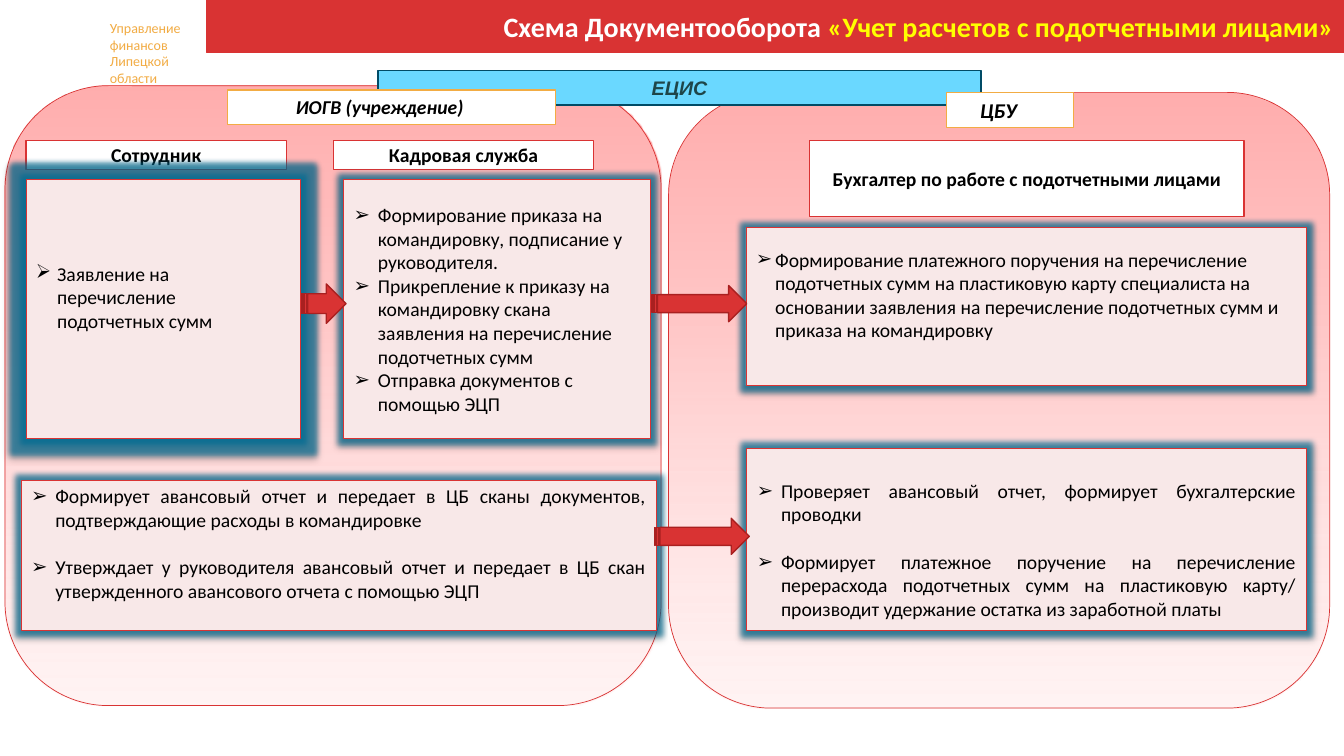
from dataclasses import dataclass

from pptx import Presentation
from pptx.dml.color import RGBColor
from pptx.enum.shapes import MSO_SHAPE as Geo
from pptx.enum.text import MSO_ANCHOR as Anchor, MSO_AUTO_SIZE as AutoSize, PP_ALIGN as Align
from pptx.oxml import parse_xml
from pptx.oxml.ns import nsdecls
from pptx.util import Inches, Pt


@dataclass(frozen=True)
class Theme:
    font: str = "Calibri"
    hub_font: str = "Arial"
    red: str = "D93333"
    dark_red: str = "A92020"
    pale: str = "F8E8E8"
    white: str = "FFFFFF"
    black: str = "000000"
    yellow: str = "FFFF00"
    amber: str = "F2AC44"
    sky: str = "6AD8FF"
    navy: str = "004B66"
    slate: str = "1E4649"
    glow: str = "006C93"
    panel_stops: tuple = ((0, "FFADAD", 100), (35, "FFC5C5", 100), (100, "FFE9E9", 50))
    title_size: float = 20
    panel_size: float = 18
    tag_size: float = 15
    body_size: float = 14
    small_size: float = 10


class SchemeSlide:
    """Places elements on a grid of 160 columns by 90 rows."""

    COLUMNS, ROWS = 160, 90

    def __init__(self, deck, theme):
        self.theme = theme
        self.column = deck.slide_width / self.COLUMNS
        self.row = deck.slide_height / self.ROWS
        self.slide = deck.slides.add_slide(deck.slide_layouts.get_by_name("Comparison"))
        self.bodies = iter([p for p in self.slide.placeholders if p.placeholder_format.idx])

    def cells(self, area):
        left, top, width, height = area
        return (round(left * self.column), round(top * self.row),
                round(width * self.column), round(height * self.row))

    def paint(self, shape, fill, line, weight):
        shape.fill.solid()
        shape.fill.fore_color.rgb = RGBColor.from_string(fill)
        self.outline(shape, line, weight)

    def outline(self, shape, line, weight):
        shape.line.color.rgb = RGBColor.from_string(line)
        shape.line.width = Pt(weight)
        shape.shadow.inherit = False

    def style(self, paragraph, size, color, bold=False, italic=False, font=None):
        for run in paragraph.runs:
            run.font.name = font or self.theme.font
            run.font.size = Pt(size)
            run.font.bold, run.font.italic = bold, italic
            run.font.color.rgb = RGBColor.from_string(color)

    def move(self, placeholder, area):
        placeholder.left, placeholder.top, placeholder.width, placeholder.height = self.cells(area)
        placeholder.text_frame.auto_size = AutoSize.NONE

    def title(self, area, lead, subject):
        bar = self.slide.shapes.title
        self.move(bar, area)
        self.paint(bar, self.theme.red, self.theme.red, 0.5)
        bar.text_frame.vertical_anchor = Anchor.MIDDLE
        heading = bar.text_frame.paragraphs[0]
        heading.text = lead
        heading.alignment = Align.RIGHT
        accent = heading.add_run()
        accent.text = subject
        self.style(heading, self.theme.title_size, self.theme.white, bold=True)
        accent.font.color.rgb = RGBColor.from_string(self.theme.yellow)

    def note(self, area, text):
        frame = self.slide.shapes.add_textbox(*self.cells(area)).text_frame
        frame.word_wrap = True
        frame.text = text
        self.style(frame.paragraphs[0], self.theme.small_size, self.theme.amber)

    def panel(self, area, text=""):
        panel = self.slide.shapes.add_shape(Geo.ROUNDED_RECTANGLE, *self.cells(area))
        self.outline(panel, self.theme.red, 0.5)
        stops = "".join(
            f'<a:gs pos="{pos * 1000}"><a:srgbClr val="{color}">'
            f'<a:alpha val="{alpha * 1000}"/></a:srgbClr></a:gs>'
            for pos, color, alpha in self.theme.panel_stops)
        panel.line._ln.addprevious(parse_xml(
            f'<a:gradFill {nsdecls("a")} rotWithShape="1"><a:gsLst>{stops}</a:gsLst>'
            '<a:lin ang="5400000" scaled="0"/></a:gradFill>'))
        panel.text_frame.text = text
        self.style(panel.text_frame.paragraphs[0], self.theme.panel_size, self.theme.black)

    def label(self, area, text, fill=None, line=None, color=None, size=None,
              italic=False, font=None, right=0.1):
        theme = self.theme
        label = self.slide.shapes.add_shape(Geo.RECTANGLE, *self.cells(area))
        self.paint(label, fill or theme.white, line or theme.red, 1)
        frame = label.text_frame
        frame.margin_right = Inches(right)
        frame.text = text
        frame.paragraphs[0].alignment = Align.CENTER
        self.style(frame.paragraphs[0], size or theme.body_size, color or theme.black,
                   True, italic, font)

    def arrow(self, area):
        arrow = self.slide.shapes.add_shape(Geo.STRIPED_RIGHT_ARROW, *self.cells(area))
        self.paint(arrow, self.theme.red, self.theme.dark_red, 1)

    def steps(self, area, items, hang=0.24, align=Align.LEFT, gap=0, tail=None,
              top=0.05, bottom=0.05, right=0.1):
        box = next(self.bodies, None)
        if box is None:
            box = self.slide.shapes.add_shape(Geo.RECTANGLE, *self.cells(area))
        else:
            self.move(box, area)
            box.element.getparent().append(box.element)
        self.paint(box, self.theme.pale, self.theme.red, 0.5)
        self.halo(box)
        frame = box.text_frame
        frame.word_wrap = True
        frame.vertical_anchor = Anchor.MIDDLE
        frame.margin_top, frame.margin_bottom = Inches(top), Inches(bottom)
        frame.margin_right = Inches(right)
        lines = items + ([tail] if tail else [])
        frame.text = "\n".join(lines)
        for index, paragraph in enumerate(frame.paragraphs):
            paragraph.alignment = align
            paragraph.space_before = Pt(gap if index else 0)
            self.bullet(paragraph, hang, index < len(items))
            self.style(paragraph, self.theme.body_size, self.theme.black)

    def bullet(self, paragraph, hang, marked):
        props = paragraph._p.get_or_add_pPr()
        props.set("marL", str(Inches(hang)))
        props.set("indent", str(-Inches(hang) if marked else 0))
        mark = 'buChar {} char="➢"' if marked else "buNone {}"
        props.append(parse_xml(f'<a:{mark.format(nsdecls("a"))}/>'))

    def halo(self, box):
        effects = box.element.spPr.find("{*}effectLst")
        effects.append(parse_xml(
            f'<a:glow {nsdecls("a")} rad="{Pt(8)}"><a:srgbClr val="{self.theme.glow}">'
            '<a:alpha val="70000"/></a:srgbClr></a:glow>'))
        effects.append(parse_xml(
            f'<a:outerShdw {nsdecls("a")} blurRad="{Pt(3.1)}" dist="{Pt(1.8)}" dir="5400000" '
            f'rotWithShape="0"><a:srgbClr val="{self.theme.black}"><a:alpha val="35000"/>'
            '</a:srgbClr></a:outerShdw>'))


def main():
    deck = Presentation()
    deck.slide_width, deck.slide_height = Inches(13.33), Inches(7.5)
    theme = Theme()
    scheme = SchemeSlide(deck, theme)

    # Heading
    scheme.title((24.6, 0, 135.4, 6.24), "Схема Документооборота ",
                 "«Учет расчетов с подотчетными лицами»")
    scheme.note((11.9, 1.7, 11.6, 9.2), "Управление финансов Липецкой области")

    # Institution and accounting centre panels
    scheme.panel((0.6, 10.2, 78.1, 73.8), "`")
    scheme.panel((79.6, 11, 78.7, 73.3))

    # Roles
    role_top = 16.7
    scheme.label((3.1, role_top, 31, 3.5), "Сотрудник")
    scheme.label((39.7, role_top, 31, 3.5), "Кадровая служба")
    scheme.label((96.4, role_top, 51.7, 9.1), "Бухгалтер по работе с подотчетными лицами")

    # Steps of each role
    scheme.steps((40.9, 21.4, 36.5, 30.8), [
        "Формирование приказа на командировку, подписание у руководителя.",
        "Прикрепление к приказу на командировку скана заявления на перечисление подотчетных сумм",
        "Отправка документов с помощью ЭЦП"])
    scheme.steps((88.8, 27.1, 66.7, 18.8), [
        "Формирование платежного поручения на перечисление подотчетных сумм на пластиковую карту "
        "специалиста на основании заявления на перечисление подотчетных сумм и приказа на "
        "командировку"], hang=0.19, bottom=0.29)
    scheme.steps((2.5, 57.2, 75.6, 17.8), [
        "Формирует авансовый отчет и передает в ЦБ сканы документов, подтверждающие расходы "
        "в командировке",
        "Утверждает у руководителя авансовый отчет и передает в ЦБ скан утвержденного авансового "
        "отчета с помощью ЭЦП"], align=Align.JUSTIFY, gap=17, bottom=0.29)
    scheme.steps((88.9, 53.4, 66.6, 21.6), [
        "Проверяет авансовый отчет, формирует бухгалтерские проводки",
        "Формирует платежное поручение на перечисление перерасхода подотчетных сумм на "
        "пластиковую карту/ производит удержание остатка из заработной платы"],
        align=Align.JUSTIFY, gap=17, top=0.25)
    scheme.steps((3.1, 21.4, 32.6, 30.8), ["Заявление на перечисление"], hang=0.21,
                 tail="подотчетных сумм", bottom=0.29, right=0.3)

    # Document flow
    for flow in ((77.6, 34, 11.3, 4.3), (35.9, 33.8, 5.3, 4.7), (77.9, 61.7, 11.3, 4.3)):
        scheme.arrow(flow)

    # Shared system and panel names
    scheme.label((45, 8.4, 71.8, 4.1), "ЕЦИС", theme.sky, theme.navy, theme.slate,
                 italic=True, font=theme.hub_font)
    scheme.label((112.7, 11, 15.1, 4.2), "ЦБУ", line=theme.amber, size=theme.tag_size,
                 italic=True, right=0.33)
    scheme.label((27.1, 10.7, 39, 4.1), "ИОГВ (учреждение)", line=theme.amber,
                 italic=True, right=0.33)

    deck.save("out.pptx")


if __name__ == "__main__":
    main()
